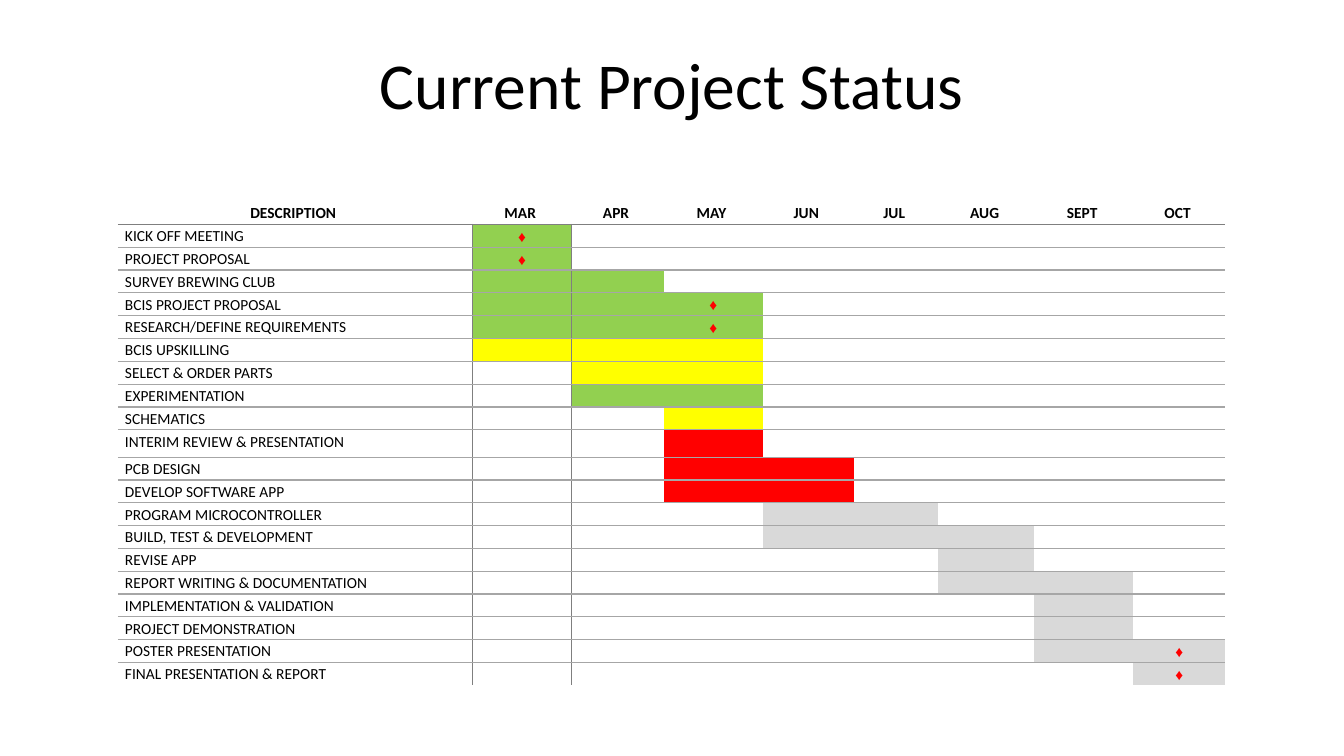
from lxml.etree import SubElement
from pptx import Presentation
from pptx.dml.color import RGBColor
from pptx.enum.text import MSO_ANCHOR as Anchor, PP_ALIGN as Align
from pptx.oxml.ns import qn
from pptx.util import Cm, Pt

COLORS = {
    "text": "000000",
    "done": "92D050",
    "ongoing": "FFFF00",
    "late": "FF0000",
    "planned": "D9D9D9",
    "milestone": "FF0000",
    "frame": "7F7F7F",
    "rule": "A6A6A6",
}
NO_GRID_STYLE = "{2D5ABB26-0587-4C30-8999-92F81FD0307C}"
MILESTONE = "♦"
HEADINGS = ["DESCRIPTION ", "MAR ", "APR ", "MAY ", "JUN ", "JUL ", "AUG ", "SEPT ", "OCT "]
COLUMN_WIDTHS = [8.93, 2.51, 2.32, 2.49, 2.29, 2.14, 2.42, 2.49, 2.32]
TALL_TASK = "INTERIM REVIEW & PRESENTATION"
TASKS = [
    ("KICK OFF MEETING", "done", 1, 1, True),
    ("PROJECT PROPOSAL", "done", 1, 1, True),
    ("SURVEY BREWING CLUB", "done", 1, 2, False),
    ("BCIS PROJECT PROPOSAL", "done", 1, 3, True),
    ("RESEARCH/DEFINE REQUIREMENTS", "done", 1, 3, True),
    ("BCIS UPSKILLING", "ongoing", 1, 3, False),
    ("SELECT & ORDER PARTS", "ongoing", 2, 3, False),
    ("EXPERIMENTATION", "done", 2, 3, False),
    ("SCHEMATICS", "ongoing", 3, 3, False),
    (TALL_TASK, "late", 3, 3, True),
    ("PCB DESIGN", "late", 3, 4, False),
    ("DEVELOP SOFTWARE APP", "late", 3, 4, False),
    ("PROGRAM MICROCONTROLLER", "planned", 4, 5, False),
    ("BUILD, TEST & DEVELOPMENT", "planned", 4, 6, False),
    ("REVISE APP", "planned", 6, 6, False),
    ("REPORT WRITING & DOCUMENTATION", "planned", 6, 7, False),
    ("IMPLEMENTATION & VALIDATION", "planned", 7, 7, False),
    ("PROJECT DEMONSTRATION", "planned", 7, 7, False),
    ("POSTER PRESENTATION", "planned", 7, 8, True),
    ("FINAL PRESENTATION & REPORT", "planned", 8, 8, True),
]


def rgb(name):
    return RGBColor.from_string(COLORS[name])


def style_run(run, size, font="Calibri", color="text", bold=False):
    run.font.size = Pt(size)
    run.font.name = font
    run.font.bold = bold
    run.font.color.rgb = rgb(color)


def add_title(slide, wording):
    title = slide.shapes.title
    title.left, title.top, title.width, title.height = Cm(2.33), Cm(1.55), Cm(29.21), Cm(1.37)
    frame = title.text_frame
    frame.text = wording
    frame.vertical_anchor = Anchor.MIDDLE
    heading = frame.paragraphs[0]
    heading.alignment = Align.CENTER
    heading.line_spacing = 0.9
    style_run(heading.runs[0], 46.8)


def draw_border(cell, side, color):
    line = SubElement(cell._tc.get_or_add_tcPr(), qn(f"a:ln{side}"), w=str(Pt(1)))
    fill = SubElement(line, qn("a:solidFill"))
    SubElement(fill, qn("a:srgbClr"), val=COLORS[color])


def border_cell(cell, row, column):
    if row and column == 1:
        draw_border(cell, "L", "frame")
    if row and column == 0:
        draw_border(cell, "R", "frame")
    if row:
        draw_border(cell, "T", "frame" if row == 1 else "rule")
    if row < len(TASKS):
        draw_border(cell, "B", "rule" if row else "frame")


def fill_cell(cell, color=None):
    if color:
        cell.fill.solid()
        cell.fill.fore_color.rgb = rgb(color)
    else:
        cell.fill.background()


def write_cell(cell, wording, align=Align.LEFT, **style):
    cell.margin_left = cell.margin_right = Cm(0.18)
    cell.margin_top, cell.margin_bottom = Cm(0.03), 0
    cell.text_frame.text = wording
    entry = cell.text_frame.paragraphs[0]
    entry.alignment = align
    entry.line_spacing = 1.07
    entry.space_after = Pt(8)
    for run in entry.runs:
        style_run(run, 11, **style)
    if not wording:
        SubElement(entry._p, qn("a:endParaRPr"), sz="1100")


def fill_task(schedule, row, task):
    name, status, first, last, milestone = task
    write_cell(schedule.cell(row, 0), name)
    fill_cell(schedule.cell(row, 0))
    for month in range(1, len(HEADINGS)):
        cell = schedule.cell(row, month)
        fill_cell(cell, status if first <= month <= last else None)
        if milestone and month == last:
            write_cell(cell, MILESTONE, Align.CENTER, font="Times New Roman", color="milestone")
            cell.vertical_anchor = Anchor.MIDDLE
        else:
            write_cell(cell, "")


def add_schedule(slide):
    row_count = len(TASKS) + 1
    schedule = slide.shapes.add_table(
        row_count, len(HEADINGS), Cm(2.97), Cm(5.08), Cm(sum(COLUMN_WIDTHS)), Cm(12.19)
    ).table
    schedule.horz_banding = False
    schedule.first_row = False
    schedule._tbl.tblPr.find(qn("a:tableStyleId")).text = NO_GRID_STYLE
    for column, width in zip(schedule.columns, COLUMN_WIDTHS):
        column.width = Cm(width)
    for row in schedule.rows:
        row.height = Cm(11.5) // len(TASKS)
    for row in range(row_count):
        for column in range(len(HEADINGS)):
            border_cell(schedule.cell(row, column), row, column)
    for column, heading in enumerate(HEADINGS):
        write_cell(schedule.cell(0, column), heading, Align.CENTER, bold=True)
        fill_cell(schedule.cell(0, column))
    for row, task in enumerate(TASKS, start=1):
        fill_task(schedule, row, task)
        if task[0] == TALL_TASK:
            schedule.rows[row].height = Cm(0.69)


def main():
    deck = Presentation()
    deck.slide_width, deck.slide_height = Cm(33.87), Cm(19.05)
    slide = deck.slides.add_slide(deck.slide_layouts[5])
    add_title(slide, "Current Project Status")
    add_schedule(slide)
    deck.save("out.pptx")


if __name__ == "__main__":
    main()
